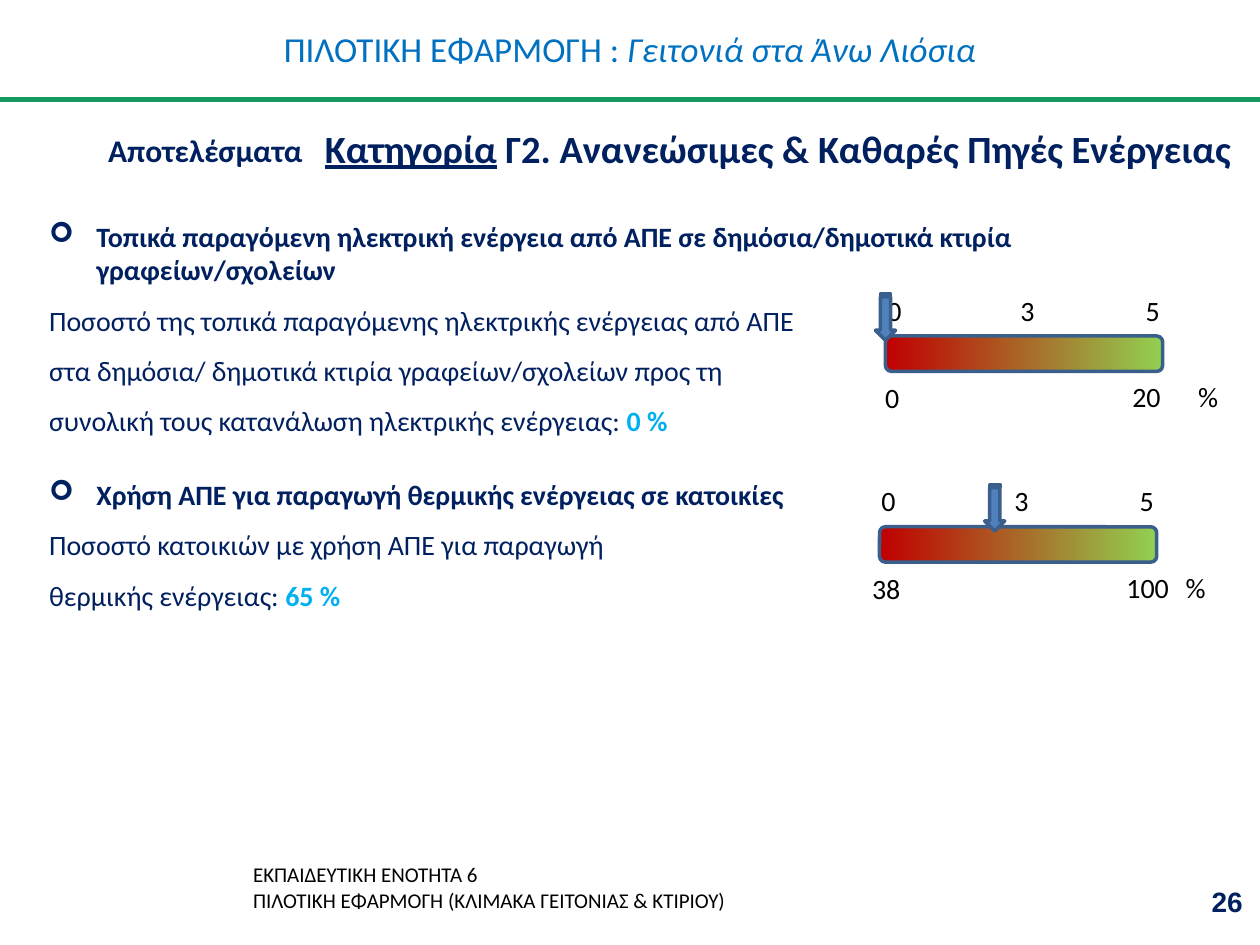
from pptx import Presentation
from pptx.dml.color import RGBColor
from pptx.enum.shapes import MSO_CONNECTOR, MSO_SHAPE
from pptx.enum.text import MSO_ANCHOR, MSO_AUTO_SIZE, PP_ALIGN
from pptx.oxml.ns import qn
from pptx.util import Pt
from lxml import etree

LEFT, MID, RIGHT = PP_ALIGN.LEFT, PP_ALIGN.CENTER, PP_ALIGN.RIGHT
TOP, CENTER = MSO_ANCHOR.TOP, MSO_ANCHOR.MIDDLE
GROW, FIXED = MSO_AUTO_SIZE.SHAPE_TO_FIT_TEXT, MSO_AUTO_SIZE.NONE
ROUND, ARROW = MSO_SHAPE.ROUNDED_RECTANGLE, MSO_SHAPE.STRIPED_RIGHT_ARROW
STRAIGHT = MSO_CONNECTOR.STRAIGHT

BLACK = RGBColor(0x00, 0x00, 0x00)
NAVY = RGBColor(0x00, 0x20, 0x60)
BLUE = RGBColor(0x00, 0x70, 0xC0)
SKY = RGBColor(0x00, 0xB0, 0xF0)
STEEL = RGBColor(0x4F, 0x81, 0xBD)
EDGE = RGBColor(0x3A, 0x5F, 0x8C)
RED = RGBColor(0xC0, 0x00, 0x00)
LIME = RGBColor(0x92, 0xD0, 0x50)
GREEN = RGBColor(0x15, 0x99, 0x61)


class Page:
    def __init__(self, slide, font="Calibri"):
        self.slide = slide
        self.font = font

    def rule(self, y, width, color, weight):
        line = self.slide.shapes.add_connector(STRAIGHT, 0, Pt(y), Pt(width), Pt(y))
        line.line.color.rgb = color
        line.line.width = Pt(weight)
        etree.SubElement(line._element.spPr, qn("a:effectLst"))

    def box(self, x, y, w, h, home=None, wrap=True, anchor=TOP, size=GROW):
        home = home or self.slide.shapes
        frame = home.add_textbox(Pt(x), Pt(y), Pt(w), Pt(h)).text_frame
        frame.word_wrap = wrap
        frame.auto_size = size
        frame.vertical_anchor = anchor
        return frame

    def run(self, para, text, size=16, color=NAVY, bold=False, font=None):
        run = para.add_run()
        run.text = text
        run.font.name = font or self.font
        run.font.size = Pt(size)
        run.font.color.rgb = color
        run.font.bold = bold
        return run

    def label(self, home, x, y, text, align=LEFT):
        """Add a scale mark as wide as its text; x is the middle if centred."""
        w = 26 if text == "%" else 15 + 8 * len(text)
        if align == MID:
            x -= w / 2
        para = self.box(x, y, w, 26.5, home, wrap=False).paragraphs[0]
        para.alignment = align
        self.run(para, text, color=BLACK)

    def topic(self, y, h, head, lines, value):
        """Add a bulleted heading, its lines and the value that ends them."""
        frame = self.box(21, y, 699, h)
        para = frame.paragraphs[0]
        props = para._p.get_or_add_pPr()
        props.set("marL", str(Pt(27)))
        props.set("indent", str(Pt(-27)))
        etree.SubElement(props, qn("a:buFont"), typeface="Wingdings")
        etree.SubElement(props, qn("a:buChar"), char="➢")
        self.run(para, head, bold=True)
        for line in lines:
            para = frame.add_paragraph()
            para.line_spacing = 1.5
            self.run(para, line)
        self.run(para, value, color=SKY, bold=True)

    def shape(self, home, kind, x, y, w, h):
        shape = home.add_shape(kind, Pt(x), Pt(y), Pt(w), Pt(h))
        shape.shadow.inherit = False
        shape.line.color.rgb = EDGE
        shape.line.width = Pt(2)
        return shape

    def gauge(self, x, y, low, high, unit, mark):
        """Draw a score bar at x, y; unit and mark are offsets from x."""
        home = self.slide.shapes.add_group_shape().shapes
        fill = self.shape(home, ROUND, x, y, 158.4, 20.2).fill
        fill.gradient()
        fill.gradient_angle = 0
        for stop, color, place in zip(fill.gradient_stops, (RED, LIME), (0, 1)):
            stop.color.rgb = color
            stop.position = place
        for text, dx in (("0", -6), ("3", 70), ("5", 141.5)):
            self.label(home, x + dx, y - 28, text)
        self.label(home, x + 3.8, y + 22, low, MID)
        self.label(home, x + 134, y + 21.5, high)
        self.label(home, x + unit, y + 21.5, "%")
        w, h = 26.6, 11.5
        arrow = self.shape(home, ARROW, x + mark - w / 2, y - 10.8 - h / 2, w, h)
        arrow.rotation = 90
        arrow.fill.solid()
        arrow.fill.fore_color.rgb = STEEL


def main():
    deck = Presentation()
    deck.slide_width, deck.slide_height = Pt(720), Pt(540)
    page = Page(deck.slides.add_slide(deck.slide_layouts[6]))
    page.rule(56.8, 720, GREEN, 3)

    foot = page.box(137.5, 489, 489, 36).paragraphs[0]
    page.run(foot, "ΕΚΠΑΙΔΕΥΤΙΚΗ ΕΝΟΤΗΤΑ 6", 12, BLACK)
    foot.add_line_break()
    page.run(foot, "ΠΙΛΟΤΙΚΗ ΕΦΑΡΜΟΓΗ (ΚΛΙΜΑΚΑ ΓΕΙΤΟΝΙΑΣ & ΚΤΙΡΙΟΥ)", 12, BLACK)

    title = page.box(0, 0, 720, 55.5, anchor=CENTER, size=FIXED).paragraphs[0]
    title.alignment = MID
    page.run(title, "ΠΙΛΟΤΙΚΗ ΕΦΑΡΜΟΓΗ : ", 20, BLUE)
    page.run(title, "Γειτονιά στα Άνω Λιόσια", 20, BLUE).font.italic = True

    page.topic(
        121.7, 133,
        "Τοπικά παραγόμενη ηλεκτρική ενέργεια από ΑΠΕ σε δημόσια/δημοτικά "
        "κτιρία γραφείων/σχολείων",
        ("Ποσοστό της τοπικά παραγόμενης ηλεκτρικής ενέργειας από ΑΠΕ",
         "στα δημόσια/ δημοτικά κτιρία γραφείων/σχολείων προς τη",
         "συνολική τους κατανάλωση ηλεκτρικής ενέργειας: "),
        "0 %")
    page.topic(
        269.3, 85,
        "Χρήση ΑΠΕ για παραγωγή θερμικής ενέργειας σε κατοικίες",
        ("Ποσοστό κατοικιών με χρήση ΑΠΕ για παραγωγή",
         "θερμικής ενέργειας: "),
        "65 %")
    page.gauge(506, 192, "0", "20", unit=171.5, mark=0)
    page.gauge(502.6, 301, "38", "100", unit=167.8, mark=65.8)

    head = page.box(178.6, 67.7, 541.4, 33.8).paragraphs[0]
    page.run(head, "Κατηγορία", 22, bold=True).font.underline = True
    page.run(head, " Γ2. Ανανεώσιμες & Καθαρές Πηγές Ενέργειας", 22, bold=True)
    kind = page.box(54.7, 71.3, 130.3, 28.8).paragraphs[0]
    page.run(kind, "Αποτελέσματα", 18, bold=True)

    number = page.box(549.4, 500.4, 167.8, 28.8, anchor=CENTER, size=FIXED)
    number.paragraphs[0].alignment = RIGHT
    page.run(number.paragraphs[0], "26", bold=True, font="Arial")
    deck.save("out.pptx")


if __name__ == "__main__":
    main()
